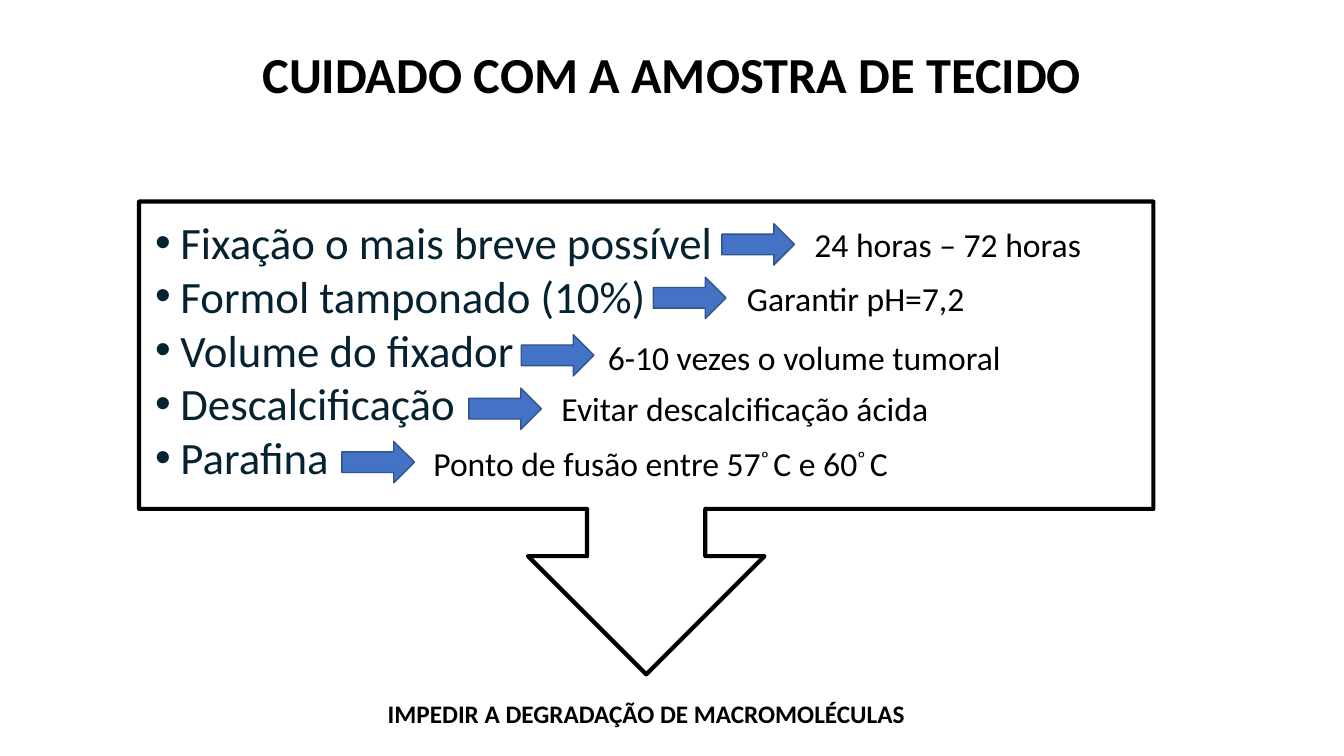
from lxml.etree import SubElement
from pptx import Presentation
from pptx.dml.color import RGBColor
from pptx.enum.shapes import MSO_SHAPE
from pptx.enum.text import MSO_ANCHOR, MSO_AUTO_SIZE, PP_ALIGN
from pptx.oxml.ns import qn
from pptx.util import Inches, Pt

TITLE = "CUIDADO COM A AMOSTRA DE TECIDO"
GOAL = "IMPEDIR A DEGRADAÇÃO DE MACROMOLÉCULAS"
STEPS = [
    ("Fixação o mais breve possível", (7.16, 2.22), (7.98, 2.17), ["24 horas – 72 horas"]),
    ("Formol tamponado (10%)", (6.48, 2.75), (7.31, 2.71), ["Garantir pH=7,2"]),
    ("Volume do fixador", (5.17, 3.32), (5.93, 3.29), ["6-10 vezes o volume tumoral"]),
    ("Descalcificação", (4.65, 3.85), (5.47, 3.8), ["Evitar descalcificação ácida"]),
    ("Parafina", (3.39, 4.38), (4.2, 4.34),
     ["Ponto de fusão entre 57", "º ", "C e 60", "º ", "C"]),
]

BLACK = RGBColor(0x00, 0x00, 0x00)
NAVY = RGBColor(0x06, 0x22, 0x31)
BLUE = RGBColor(0x44, 0x72, 0xC4)
EDGE = RGBColor(0x31, 0x53, 0x8F)


def style(par, size, color, bold=False):
    for run in par.runs:
        run.font.name = "Calibri"
        run.font.size = Pt(size)
        run.font.bold = bold
        run.font.color.rgb = color


def pad(frame, side, top):
    frame.margin_left = frame.margin_right = Inches(side)
    frame.margin_top = frame.margin_bottom = Inches(top)
    frame.word_wrap = True
    frame.vertical_anchor = MSO_ANCHOR.TOP


def add_box(slide, x, y, w, h, side=0.1, top=0.05):
    box = slide.shapes.add_textbox(Inches(x), Inches(y), Inches(w), Inches(h))
    pad(box.text_frame, side, top)
    return box.text_frame


def add_shape(slide, kind, x, y, w, h, line, width):
    shape = slide.shapes.add_shape(kind, Inches(x), Inches(y), Inches(w), Inches(h))
    shape.shadow.inherit = False
    shape.line.color.rgb = line
    shape.line.width = Pt(width)
    return shape


def add_bullet(par):
    props = par._p.get_or_add_pPr()
    props.set("marL", str(Inches(0.25)))
    props.set("indent", str(Inches(-0.25)))
    tint = SubElement(props, qn("a:buClr"))
    SubElement(tint, qn("a:srgbClr")).set("val", str(NAVY))
    SubElement(props, qn("a:buFont")).set("typeface", "Arial")
    SubElement(props, qn("a:buChar")).set("char", "•")


def add_title(slide):
    title = slide.shapes.title
    title.left, title.top = Inches(0), Inches(0.3)
    title.width, title.height = Inches(13.33), Inches(0.77)
    frame = title.text_frame
    frame.text = TITLE
    frame.auto_size = MSO_AUTO_SIZE.NONE
    pad(frame, 0.13, 0.13)
    par = frame.paragraphs[0]
    par.alignment = PP_ALIGN.CENTER
    par.line_spacing = 1.0
    style(par, 36, BLACK, True)


def add_list(slide):
    frame = add_box(slide, 1.41, 2, 9.9, 3.5, 0.13, 0.13)
    frame.text = "\n".join(step[0] for step in STEPS)
    for par in frame.paragraphs:
        add_bullet(par)
        style(par, 32, NAVY)


def add_note(slide, spot, parts):
    par = add_box(slide, *spot, 5.07, 0.5).paragraphs[0]
    for part in parts:
        run = par.add_run()
        run.text = part
        if part == "º ":
            run.font._element.set("baseline", "30000")
    style(par, 24, BLACK)


def main():
    deck = Presentation()
    deck.slide_width, deck.slide_height = Inches(13.33), Inches(7.5)
    slide = deck.slides.add_slide(deck.slide_layouts[5])
    add_title(slide)
    add_list(slide)

    frame = add_shape(slide, MSO_SHAPE.DOWN_ARROW_CALLOUT, 1.38, 2, 10.06, 4.69, BLACK, 3)
    frame.fill.background()
    for i, ratio in enumerate((0.25, 0.25, 0.25, 0.65)):
        frame.adjustments[i] = ratio

    for _, tip, spot, parts in STEPS:
        arrow = add_shape(slide, MSO_SHAPE.RIGHT_ARROW, *tip, 0.72, 0.41, EDGE, 1)
        arrow.fill.solid()
        arrow.fill.fore_color.rgb = BLUE
        add_note(slide, spot, parts)

    goal = add_box(slide, 3.6, 6.88, 5.62, 0.4)
    goal.text = GOAL
    goal.paragraphs[0].alignment = PP_ALIGN.CENTER
    style(goal.paragraphs[0], 18, BLACK, True)
    deck.save("out.pptx")


if __name__ == "__main__":
    main()
